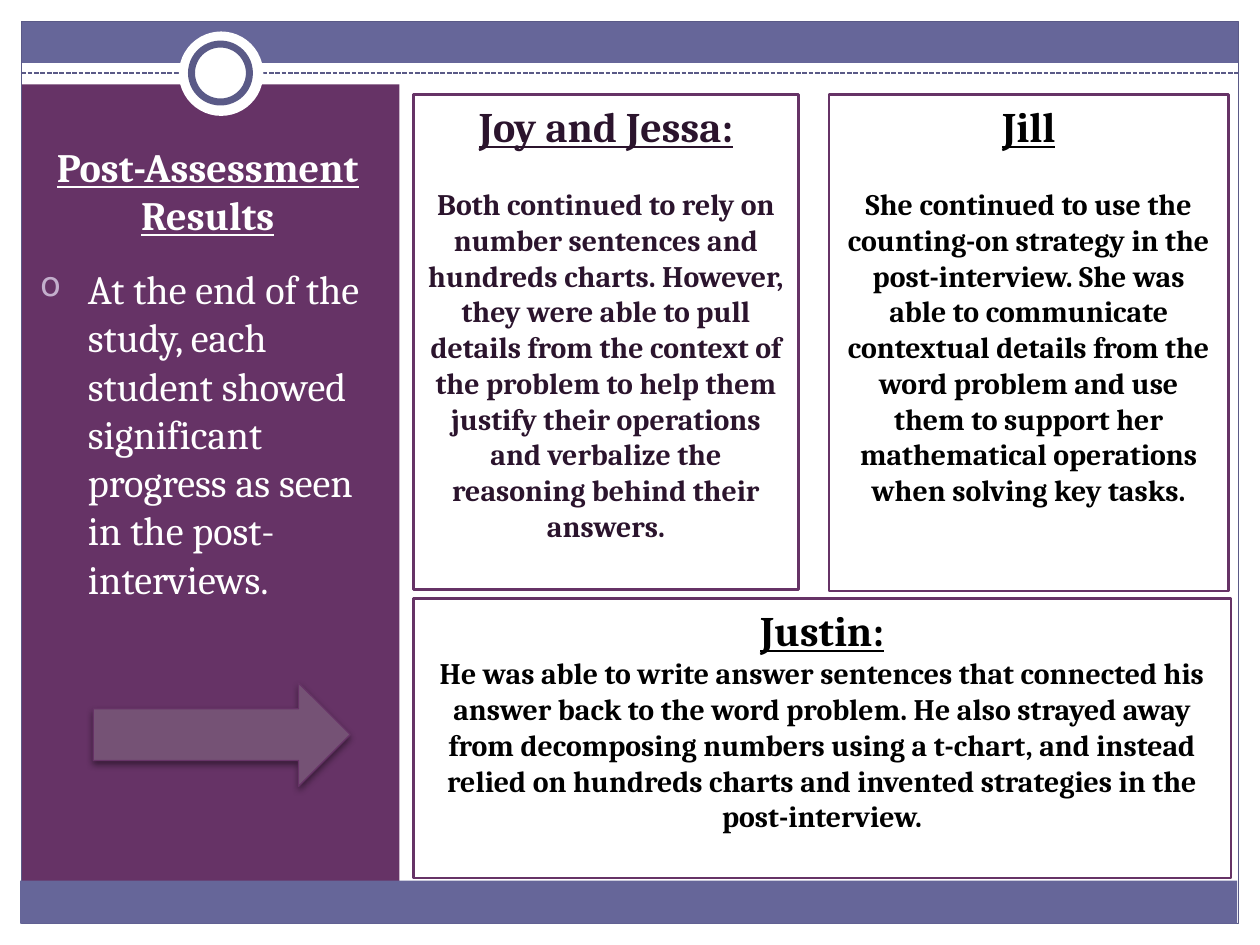
from dataclasses import dataclass
from typing import Optional

from lxml import etree
from pptx import Presentation, util as u
from pptx.dml.color import RGBColor
from pptx.enum import dml, shapes, text
from pptx.oxml import parse_xml
from pptx.oxml.ns import nsdecls, qn

COLORS = {
    "white": "FFFFFF", "black": "000000", "band": "666699", "rule": "5A5A87",
    "plum": "663366", "dark plum": "2B142D", "arrow": "755275", "bullet": "C3AFCC",
}
FONT = "Cambria"
RECT = shapes.MSO_SHAPE.RECTANGLE
OVAL = shapes.MSO_SHAPE.OVAL


@dataclass
class Block:
    left: float
    top: float
    width: float
    height: float
    fill: Optional[str] = None
    line: Optional[str] = None
    weight: float = 0.75
    kind: shapes.MSO_SHAPE = RECT


@dataclass
class Card:
    block: Block
    heading: str
    body: str
    color: str = "black"
    gap: float = 0


def rgb(name: str) -> RGBColor:
    return RGBColor.from_string(COLORS[name])


def draw_block(page, block: Block):
    shape = page.shapes.add_shape(
        block.kind, u.Inches(block.left), u.Inches(block.top),
        u.Inches(block.width), u.Inches(block.height))
    shape.shadow.inherit = False
    if block.fill:
        shape.fill.solid()
        shape.fill.fore_color.rgb = rgb(block.fill)
    else:
        shape.fill.background()
    if block.line:
        shape.line.color.rgb = rgb(block.line)
        shape.line.width = u.Pt(block.weight)
    else:
        shape.line.fill.background()
    return shape


def write(frame, words: str, *, size: float, color: str, bold: bool = False,
          underline: bool = False, centred: bool = True,
          before: float = 0, after: float = 0):
    """Fill the first paragraph if it is empty, otherwise add one."""
    para = frame.paragraphs[0]
    if para.runs:
        para = frame.add_paragraph()
    para.alignment = text.PP_ALIGN.CENTER if centred else text.PP_ALIGN.LEFT
    para.space_before, para.space_after = u.Pt(before), u.Pt(after)
    span = para.add_run()
    span.text = words
    font = span.font
    font.name, font.size, font.bold, font.underline = FONT, u.Pt(size), bold, underline
    font.color.rgb = rgb(color)
    return para


def add_bullet(para, mark: str, color: str, percent: int, indent: float) -> None:
    props = para._p.get_or_add_pPr()
    props.set("marL", str(u.Inches(indent)))
    props.set("indent", str(-u.Inches(indent)))
    tint = etree.SubElement(props, qn("a:buClr"))
    etree.SubElement(tint, qn("a:srgbClr"), val=COLORS[color])
    etree.SubElement(props, qn("a:buSzPct"), val=str(percent * 1000))
    etree.SubElement(props, qn("a:buChar"), char=mark)


def draw_card(page, card: Card) -> None:
    frame = draw_block(page, card.block).text_frame
    frame.word_wrap = True
    frame.vertical_anchor = text.MSO_ANCHOR.TOP
    write(frame, card.heading, size=24, color=card.color, bold=True, underline=True)
    write(frame, card.body, size=17, color=card.color, bold=True, before=card.gap)


def draw_rule(page) -> None:
    rule = page.shapes.add_connector(
        shapes.MSO_CONNECTOR.STRAIGHT,
        u.Inches(0.17), u.Inches(0.58), u.Inches(9.83), u.Inches(0.58))
    rule.line.color.rgb = rgb("rule")
    rule.line.width = u.Pt(0.9)
    rule.line.dash_style = dml.MSO_LINE.SQUARE_DOT
    etree.SubElement(rule._element.spPr, qn("a:effectLst"))


def draw_sidebar_text(page) -> None:
    box = page.shapes.add_textbox(
        u.Inches(0.22), u.Inches(1.08), u.Inches(2.86), u.Inches(5.75))
    frame = box.text_frame
    frame.word_wrap = True
    style = dict(size=23, color="white", before=4.6, after=10)
    write(frame, "Post-Assessment Results", bold=True, underline=True, **style)
    para = write(
        frame, "At the end of the study, each student showed significant progress "
        "as seen in the post-interviews.", centred=False, **style)
    add_bullet(para, "o", "bullet", 85, 0.38)


def draw_arrow(page) -> None:
    arrow = draw_block(page, Block(0.74, 5.42, 2.04, 0.82, "arrow", "plum",
                                   kind=shapes.MSO_SHAPE.RIGHT_ARROW))
    effects = arrow._element.spPr.find(qn("a:effectLst"))
    effects.append(parse_xml(
        f'<a:outerShdw {nsdecls("a")} blurRad="{u.Pt(4)}" dist="{u.Pt(2)}" '
        f'dir="5400000" rotWithShape="0"><a:srgbClr val="{COLORS["black"]}">'
        '<a:alpha val="45000"/></a:srgbClr></a:outerShdw>'))


BACKDROP = [
    # White margins
    Block(9.83, 0, 0.17, 7.5, "white"),
    Block(0, 0, 10, 0.17, "white"),
    Block(0, 0, 0.17, 7.5, "white"),
    # Top band, sidebar and outer frame
    Block(0.17, 0.17, 9.66, 0.33, "band"),
    Block(0.17, 0.67, 3, 6.42, "plum"),
    Block(0.17, 0.17, 9.66, 7.16, line="rule"),
    # Ring and bottom band
    Block(1.42, 0.25, 0.67, 0.67, "white", kind=OVAL),
    Block(1.52, 0.35, 0.46, 0.46, "white", "rule", 4, OVAL),
    Block(0.16, 6.99, 9.66, 0.34, "band"),
]

CARDS = [
    Card(Block(3.28, 0.75, 3.06, 3.93, line="plum", weight=1.5), "Joy and Jessa:",
         "Both continued to rely on number sentences and hundreds charts. However, "
         "they were able to pull details from the context of the problem to help "
         "them justify their operations and verbalize the reasoning behind their "
         "answers.", "dark plum", 20),
    Card(Block(6.58, 0.75, 3.17, 3.94, line="plum", weight=1.5), "Jill",
         "She continued to use the counting-on strategy in the post-interview. She "
         "was able to communicate contextual details from the word problem and use "
         "them to support her mathematical operations when solving key tasks.", gap=20),
    Card(Block(3.28, 4.75, 6.49, 2.22, line="plum", weight=1.5), "Justin:",
         "He was able to write answer sentences that connected his answer back to "
         "the word problem. He also strayed away from decomposing numbers using a "
         "t-chart, and instead relied on hundreds charts and invented strategies in "
         "the post-interview."),
]


def main() -> None:
    deck = Presentation()
    deck.slide_width, deck.slide_height = u.Inches(10), u.Inches(7.5)
    page = deck.slides.add_slide(deck.slide_layouts[6])
    draw_rule(page)
    for block in BACKDROP:
        draw_block(page, block)
    draw_sidebar_text(page)
    draw_arrow(page)
    for card in CARDS:
        draw_card(page, card)
    deck.save("out.pptx")


if __name__ == "__main__":
    main()
